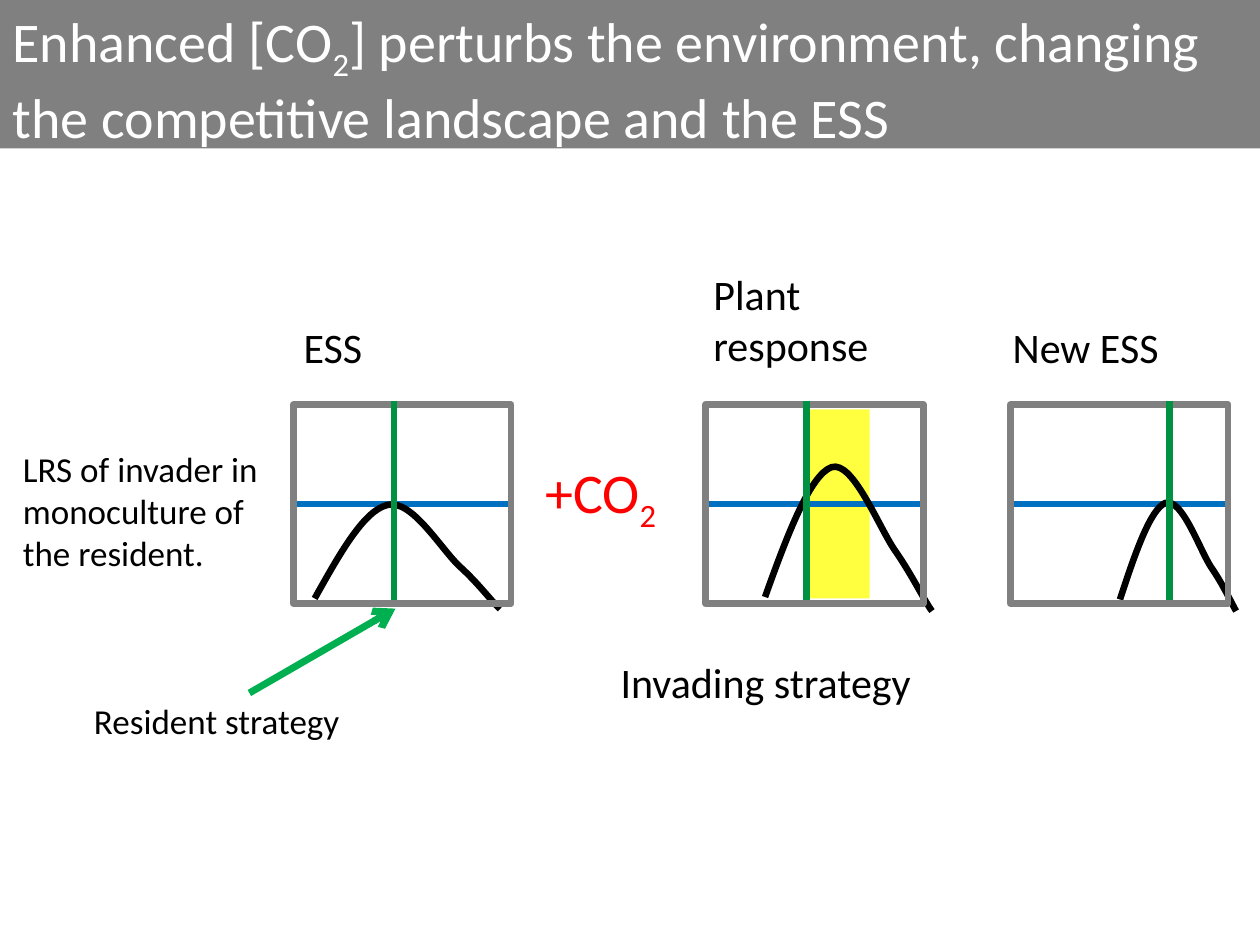
"""Build a slide on how enhanced CO2 shifts the evolutionarily stable strategy."""
import lxml.etree
import pptx
import pptx.dml.color
import pptx.enum.shapes
import pptx.enum.text
import pptx.oxml
import pptx.oxml.ns
import pptx.util

Pt = pptx.util.Pt
qn = pptx.oxml.ns.qn
RECTANGLE = pptx.enum.shapes.MSO_SHAPE.RECTANGLE
ALIGN = pptx.enum.text.PP_ALIGN
ANCHOR = pptx.enum.text.MSO_ANCHOR
COLORS = {"white": "FFFFFF", "black": "000000", "gray": "808080", "red": "FF0000",
          "blue": "0070C0", "resident": "009242", "arrow": "00B050", "yellow": "FFFF00"}
FONT = "Calibri"
FRAME_TOP, FRAME_WIDTH, FRAME_HEIGHT = 231.2, 124.5, 113.8
ZERO_LEVEL = 288
RESIDENT_TOP, RESIDENT_BOTTOM = 229, 342.8
LINE_WIDTH = 3.75

TITLE = ["Enhanced [CO", "2", "] perturbs the environment, changing the competitive landscape and the ESS"]
AXIS_LABEL = (["LRS of invader in monoculture of the resident."], (6, 252, 166, 79.8), 20)
INVADER_LABEL = (["Invading strategy"], (220.5, 371.5, 434, 36), 24)
RESIDENT_LABEL = (["Resident strategy"], (46.6, 396, 190, 32), 20)
TREATMENT = (["+CO", "2"], (304.5, 258, 96, 46), 32)
RESIDENT_ARROW = ((142.5, 396), (226, 347.8))
INVASION_WINDOW = (461, 234, 36, 108)
PANELS = [
    {"label": "ESS", "label_box": (166.4, 180, 141, 36), "left": 167.6, "resident": 225.2,
     "grouped": False,
     "curve": [(179.8, 342), (194.4, 316), (208, 291.6), (221.6, 288.5), (235.4, 285.2),
               (252, 313.8), (262.8, 323.8), (273.5, 333.4), (282, 345), (285.8, 348)]},
    {"label": "Plant response", "label_box": (400.6, 150, 141, 65.5), "left": 403.2, "resident": 460.8,
     "grouped": True,
     "curve": [(437.2, 341.2), (450, 305.4), (463, 271.4), (475.2, 267), (487.5, 262.8),
               (502.6, 302.4), (512, 315.4), (521.4, 329), (529.2, 345), (532.6, 349.2)]},
    {"label": "New ESS", "label_box": (571.6, 180, 141, 36), "left": 577.4, "resident": 668.3,
     "grouped": False,
     "curve": [(640, 342.6), (648.7, 316), (657.4, 291), (666, 287.4), (675.4, 284.4),
               (685.4, 313.8), (692, 324), (699, 334), (704.2, 345.6), (706.4, 349.2)]},
]


def rgb(name):
    return pptx.dml.color.RGBColor.from_string(COLORS[name])


def drawing_element(tag, **attributes):
    element = pptx.oxml.parse_xml(f"<a:{tag} {pptx.oxml.ns.nsdecls('a')}/>")
    for name, value in attributes.items():
        element.set(name, value)
    return element


def write(shape, parts, size, color="black", align=ALIGN.LEFT, anchor=ANCHOR.TOP):
    frame = shape.text_frame
    frame.word_wrap = True
    frame.auto_size = pptx.enum.text.MSO_AUTO_SIZE.SHAPE_TO_FIT_TEXT
    frame.vertical_anchor = anchor
    paragraph = frame.paragraphs[0]
    paragraph.alignment = align
    for index, part in enumerate(parts):
        run = paragraph.add_run()
        run.text = part
        run.font.name = FONT
        run.font.size = Pt(size)
        run.font.color.rgb = rgb(color)
        if index % 2:
            run.font._element.set("baseline", "-25000")


def add_text(shapes, parts, box, size, color="black"):
    write(shapes.add_textbox(*map(Pt, box)), parts, size, color)


def add_rectangle(shapes, box, fill=None, line=None):
    shape = shapes.add_shape(RECTANGLE, *map(Pt, box))
    shape.shadow.inherit = False
    if fill:
        shape.fill.solid()
        shape.fill.fore_color.rgb = rgb(fill)
    else:
        shape.fill.background()
    if line:
        shape.line.color.rgb = rgb(line)
        shape.line.width = Pt(LINE_WIDTH)
    else:
        shape.line.fill.background()
    return shape


def add_line(shapes, start, end, color, width=LINE_WIDTH):
    connector = shapes.add_connector(pptx.enum.shapes.MSO_CONNECTOR.STRAIGHT, *map(Pt, start + end))
    connector.line.color.rgb = rgb(color)
    connector.line.width = Pt(width)
    connector._element.spPr.append(drawing_element("effectLst"))
    return connector


def add_curve(shapes, controls):
    points = [(Pt(x), Pt(y)) for x, y in controls]
    builder = shapes.build_freeform(*points[0])
    builder.add_line_segments(points[1:], close=False)
    curve = builder.convert_to_shape()
    segments = list(curve._element.spPr.iter(qn("a:lnTo")))
    outline = segments[0].getparent()
    for first in range(0, len(segments), 3):
        bezier = lxml.etree.SubElement(outline, qn("a:cubicBezTo"))
        for segment in segments[first:first + 3]:
            bezier.append(segment[0])
            outline.remove(segment)
    curve.shadow.inherit = False
    curve.fill.background()
    curve.line.color.rgb = rgb("black")
    curve.line.width = Pt(LINE_WIDTH)


def add_panel(slide, panel):
    shapes = slide.shapes.add_group_shape().shapes if panel["grouped"] else slide.shapes
    left, resident = panel["left"], panel["resident"]
    add_text(shapes, [panel["label"]], panel["label_box"], 24)
    add_line(shapes, (left + FRAME_WIDTH - 0.5, ZERO_LEVEL), (left - 1, ZERO_LEVEL), "blue")
    add_curve(shapes, panel["curve"])
    add_rectangle(shapes, (left, FRAME_TOP, FRAME_WIDTH, FRAME_HEIGHT), line="gray")
    add_line(shapes, (resident, RESIDENT_TOP), (resident, RESIDENT_BOTTOM), "resident")


def add_title(slide):
    title = slide.shapes.title
    title.left, title.top, title.width, title.height = map(Pt, (0, 0, 720, 84.8))
    title.fill.solid()
    title.fill.fore_color.rgb = rgb("gray")
    write(title, TITLE, 32, "white")


def main():
    presentation = pptx.Presentation()
    presentation.slide_width, presentation.slide_height = Pt(720), Pt(540)
    slide = presentation.slides.add_slide(presentation.slide_layouts[5])
    shapes = slide.shapes
    add_title(slide)
    for (parts, box, size), align in ((AXIS_LABEL, ALIGN.LEFT), (INVADER_LABEL, ALIGN.CENTER)):
        write(add_rectangle(shapes, box, fill="white"), parts, size, align=align, anchor=ANCHOR.MIDDLE)
    window = add_rectangle(shapes, INVASION_WINDOW, fill="yellow")
    window_color = window._element.spPr.find(".//" + qn("a:srgbClr"))
    window_color.append(drawing_element("alpha", val="75000"))
    add_text(shapes, *TREATMENT, color="red")
    for panel in PANELS:
        add_panel(slide, panel)
    add_text(shapes, *RESIDENT_LABEL)
    arrow = add_line(shapes, *RESIDENT_ARROW, "arrow", 4)
    arrow.line._get_or_add_ln().append(drawing_element("tailEnd", type="arrow"))
    presentation.save("out.pptx")


if __name__ == "__main__":
    main()
